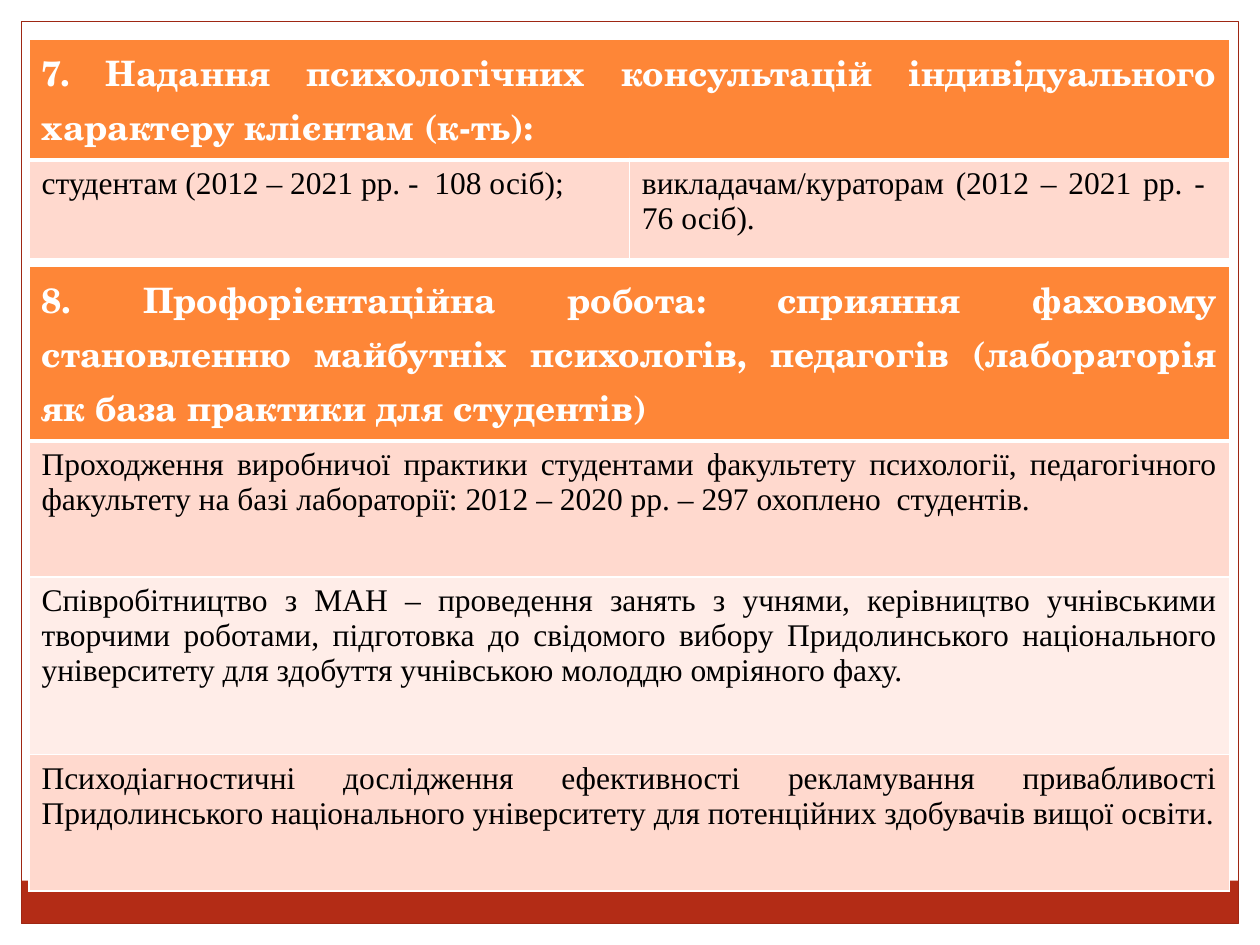
from dataclasses import dataclass

from lxml import etree
from pptx import Presentation
from pptx.dml.color import RGBColor
from pptx.enum.shapes import MSO_SHAPE
from pptx.enum.text import PP_ALIGN
from pptx.oxml.ns import qn
from pptx.util import Inches, Pt

RECTANGLE = MSO_SHAPE.RECTANGLE
JUSTIFY = PP_ALIGN.JUSTIFY
BLANK_LAYOUT = 6


@dataclass(frozen=True)
class Theme:
    """Colours, fonts and type sizes of the slide."""

    white: str = "FFFFFF"
    black: str = "000000"
    band: str = "B32C16"
    frame: str = "9E2713"
    heading_fill: str = "FE8637"
    row_fills: tuple = ("FFD9CE", "FFEDE8")
    heading_font: str = "TeX Gyre Schola"
    body_font: str = "Times New Roman"
    heading_size: int = 20
    body_size: int = 18
    thin_rule: int = 1
    heading_rule: int = 3


class SlideBuilder:
    """Draws styled elements on the current slide."""

    def __init__(self, slide, theme):
        """Keep the slide and its theme."""
        self.slide = slide
        self.theme = theme

    def rectangle(self, left, top, width, height, fill=None, line=None):
        """Add a plain rectangle with an optional fill and outline."""
        box = self.slide.shapes.add_shape(
            RECTANGLE, Inches(left), Inches(top), Inches(width), Inches(height)
        )
        box.shadow.inherit = False
        if fill:
            box.fill.solid()
            box.fill.fore_color.rgb = RGBColor.from_string(fill)
        else:
            box.fill.background()
        if line:
            box.line.color.rgb = RGBColor.from_string(line)
            box.line.width = Pt(0.75)
        else:
            box.line.fill.background()
        return box

    def border(self, cell, side, width):
        """Add one white border to a cell."""
        properties = cell._tc.get_or_add_tcPr()
        rule = etree.SubElement(properties, qn(f"a:{side}"), w=str(Pt(width)))
        fill = etree.SubElement(rule, qn("a:solidFill"))
        etree.SubElement(fill, qn("a:srgbClr"), val=self.theme.white)

    def cell(self, cell, row, text):
        """Style a cell by its row and write its text."""
        theme = self.theme
        heading = row == 0
        top = theme.heading_rule if row == 1 else theme.thin_rule
        bottom = theme.heading_rule if heading else theme.thin_rule
        widths = {"lnL": theme.thin_rule, "lnR": theme.thin_rule, "lnT": top, "lnB": bottom}
        for side, width in widths.items():
            self.border(cell, side, width)
        fill = theme.heading_fill if heading else theme.row_fills[(row - 1) % 2]
        cell.fill.solid()
        cell.fill.fore_color.rgb = RGBColor.from_string(fill)
        para = cell.text_frame.paragraphs[0]
        para.alignment = JUSTIFY
        if not text:
            return
        span = para.add_run()
        span.text = text
        span.font.name = theme.heading_font if heading else theme.body_font
        span.font.size = Pt(theme.heading_size if heading else theme.body_size)
        span.font.bold = heading
        span.font.color.rgb = RGBColor.from_string(theme.white if heading else theme.black)

    def table(self, left, top, width, heights, rows):
        """Add a table whose first row is a heading across all columns."""
        columns = len(rows[-1])
        table = self.slide.shapes.add_table(
            len(rows), columns, Inches(left), Inches(top), Inches(width), Inches(sum(heights))
        ).table
        for row, height in zip(table.rows, heights):
            row.height = Inches(height)
        for index, texts in enumerate(rows):
            padded = texts + [""] * (columns - len(texts))
            for column, text in enumerate(padded):
                self.cell(table.cell(index, column), index, text)
        if columns > 1:
            table.cell(0, 0).merge(table.cell(0, columns - 1))
        return table


CONSULTATIONS = [
    ["7. Надання психологічних консультацій індивідуального характеру клієнтам (к-ть):"],
    [
        "студентам (2012 – 2021 рр. -  108 осіб);",
        "викладачам/кураторам (2012 – 2021 рр. -  76 осіб).",
    ],
]

CAREER_GUIDANCE = [
    [
        "8. Профорієнтаційна робота: сприяння фаховому становленню майбутніх "
        "психологів, педагогів (лабораторія як база практики для студентів)"
    ],
    [
        "Проходження виробничої практики студентами факультету психології, "
        "педагогічного факультету на базі лабораторії: 2012 – 2020 рр. – "
        "297 охоплено  студентів."
    ],
    [
        "Співробітництво з МАН – проведення занять з учнями, керівництво "
        "учнівськими творчими роботами, підготовка до свідомого вибору "
        "Придолинського національного університету для здобуття учнівською "
        "молоддю омріяного фаху."
    ],
    [
        "Психодіагностичні дослідження ефективності рекламування привабливості "
        "Придолинського національного університету для потенційних здобувачів "
        "вищої освіти."
    ],
]


def main():
    """Build the slide and save the deck."""
    deck = Presentation()
    deck.slide_width, deck.slide_height = Inches(10), Inches(7.5)
    page = deck.slides.add_slide(deck.slide_layouts[BLANK_LAYOUT])
    theme = Theme()
    builder = SlideBuilder(page, theme)
    builder.rectangle(0.17, 6.99, 9.66, 0.34, fill=theme.band)
    builder.rectangle(0.17, 0.17, 9.66, 7.16, line=theme.frame)
    builder.table(0.23, 0.31, 9.53, [0.94, 0.78], CONSULTATIONS)
    builder.table(0.23, 2.11, 9.53, [1.19, 1.08, 1.41, 1.08], CAREER_GUIDANCE)
    deck.save("out.pptx")


if __name__ == "__main__":
    main()
